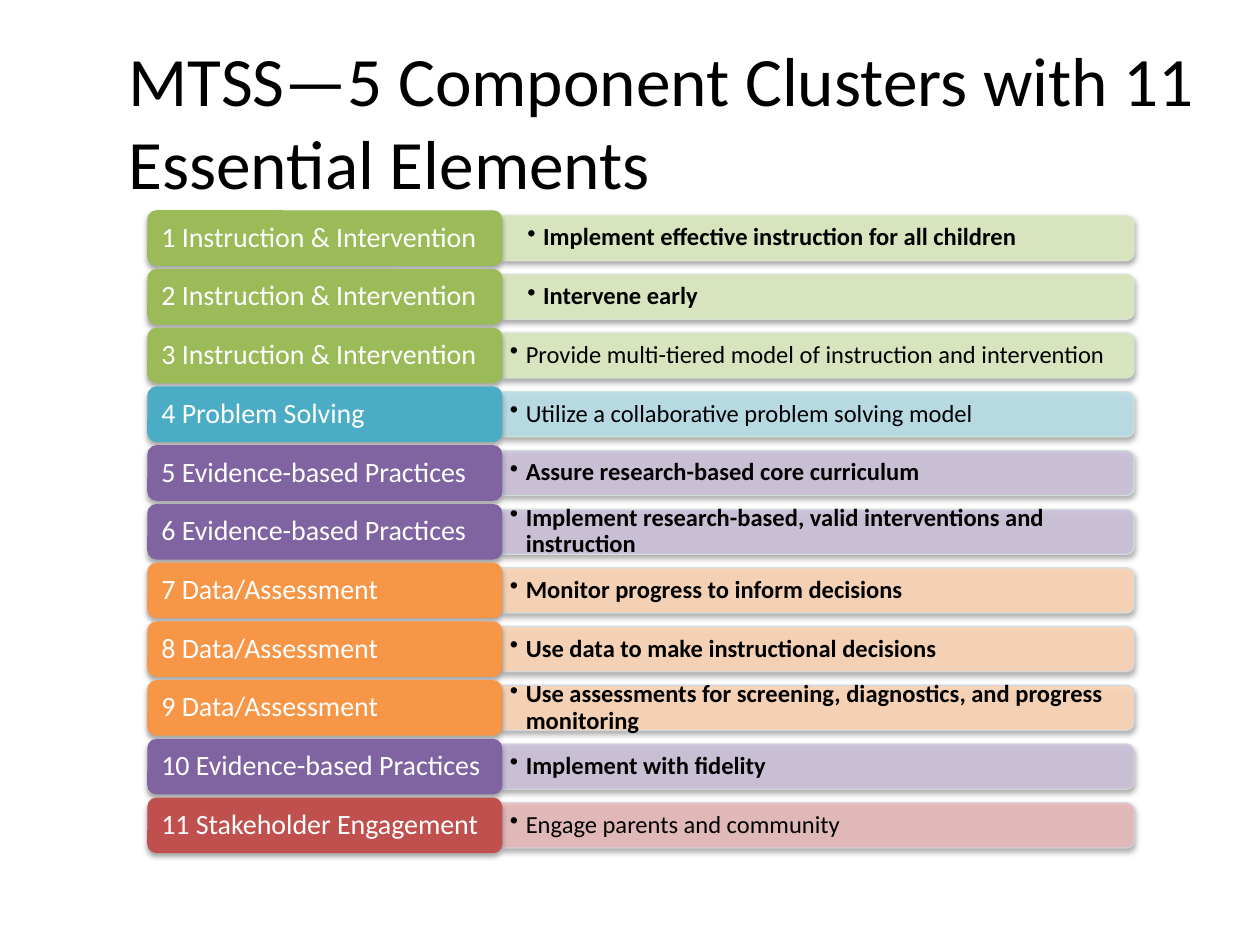
from pptx import Presentation, util as u
from pptx.dml.color import RGBColor
from pptx.enum import shapes, text
from pptx.oxml import parse_xml
from pptx.oxml.ns import nsdecls, qn
from lxml import etree

GREEN, TEAL = ("9BBB59", "D7E4BD", 100), ("4BACC6", "B7DEE8", 90)
PURPLE, ORANGE = ("8064A2", "CCC1DA", 90), ("F79646", "FCD5B5", 90)
RED = ("C0504D", "E6B9B8", 90)
TEACH, PROOF, DATA = ("Instruction & Intervention", "Evidence-based Practices",
                      "Data/Assessment")

# cluster, colours, bar edge, element, bold
ROWS = [
    (TEACH, GREEN, "DEE7D1", "Implement effective instruction for all children", True),
    (TEACH, GREEN, "D8E6D2", "Intervene early", True),
    (TEACH, GREEN, "D2E6D2", "Provide multi-tiered model of instruction and intervention", False),
    ("Problem Solving", TEAL, "D2E5D8", "Utilize a collaborative problem solving model", False),
    (PROOF, PURPLE, "D2E4DD", "Assure research-based core curriculum", True),
    (PROOF, PURPLE, "D2E3E2", "Implement research-based, valid interventions and instruction", True),
    (DATA, ORANGE, "D2DFE3", "Monitor progress to inform decisions", True),
    (DATA, ORANGE, "D2DAE2", "Use data to make instructional decisions", True),
    (DATA, ORANGE, "D3D6E1", "Use assessments for screening, diagnostics, and progress monitoring", True),
    (PROOF, PURPLE, "D4D3E1", "Implement with fidelity", True),
    ("Stakeholder Engagement", RED, "D8D3E0", "Engage parents and community", False),
]
SHADOW = (f'<a:outerShdw {nsdecls("a")} blurRad="40000" dist="23000" dir="5400000" '
          'rotWithShape="0"><a:srgbClr val="000000"><a:alpha val="35000"/>'
          '</a:srgbClr></a:outerShdw>')

# Centimetres
LEFT, TOP, SPAN = 2.97, 4.24, 11.84
TAB_W, TAB_H = 7.16, 1.12
BAR_W, BAR_H = 12.73, 0.91
BOX_W, BOX_H = 12.7, 0.82
EDGE = LEFT + TAB_W


def tint(color, code):
    color.rgb = RGBColor.from_string(code)


def write(shape, words, size, code, side, rise, bold=False):
    """Set middle-anchored text with side and rise as insets in cm."""
    frame = shape.text_frame
    frame.word_wrap = True
    frame.vertical_anchor = text.MSO_ANCHOR.MIDDLE
    frame.margin_left = frame.margin_right = u.Cm(side)
    frame.margin_top = frame.margin_bottom = u.Cm(rise)
    para = frame.paragraphs[0]
    para.alignment = text.PP_ALIGN.LEFT
    run = para.add_run()
    run.text = words
    run.font.name, run.font.size, run.font.bold = "Calibri", u.Pt(size), bold
    tint(run.font.color, code)
    return para


deck = Presentation()
deck.slide_width, deck.slide_height = u.Cm(25.4), u.Cm(19.05)
slide = deck.slides.add_slide(deck.slide_layouts[6])
items = slide.shapes

for i, (name, (dark, pale, solid), rim, words, bold) in enumerate(ROWS):
    top = TOP + SPAN * i / (len(ROWS) - 1)
    mid = top + TAB_H / 2

    # Turned a quarter so that the round corners face right
    bar = items.add_shape(
        shapes.MSO_SHAPE.ROUND_2_SAME_RECTANGLE,
        u.Cm(EDGE + (BAR_W - BAR_H) / 2), u.Cm(mid - BAR_W / 2),
        u.Cm(BAR_H), u.Cm(BAR_W))
    bar.rotation = 90
    bar.fill.solid()
    tint(bar.fill.fore_color, pale)
    tint(bar.line.color, rim)
    bar.line.width = u.Pt(0.75)
    for node, part in zip(bar.element.spPr.iter(qn("a:srgbClr")), (solid, 90)):
        etree.SubElement(node, qn("a:alpha")).set("val", str(part * 1000))

    box = items.add_textbox(u.Cm(EDGE), u.Cm(mid - BOX_H / 2), u.Cm(BOX_W), u.Cm(BOX_H))
    side, rise = (0.5, 0.25) if i < 2 else (0.15, 0.08)
    para = write(box, words, 14, "000000", side, rise, bold)
    para.line_spacing = 0.9
    props = para._p.get_or_add_pPr()
    props.set("marL", str(u.Cm(0.32)))
    props.set("indent", str(-u.Cm(0.32)))
    etree.SubElement(props, qn("a:buChar")).set("char", "•")

    tab = items.add_shape(shapes.MSO_SHAPE.ROUNDED_RECTANGLE,
                          u.Cm(LEFT), u.Cm(top), u.Cm(TAB_W), u.Cm(TAB_H))
    tab.fill.solid()
    tint(tab.fill.fore_color, dark)
    tab.line.fill.background()
    write(tab, f"{i + 1} {name}", 16, "FFFFFF", 0.23, 0.13).line_spacing = 0.9

    for shape in (bar, tab):
        shape.shadow.inherit = False
        shape.element.spPr.find(qn("a:effectLst")).append(parse_xml(SHADOW))

title = items.add_textbox(u.Cm(2.34), u.Cm(0.84), u.Cm(22.43), u.Cm(3.18))
write(title, "MTSS—5 Component Clusters with 11 Essential Elements",
      39.6, "000000", 0.25, 0.13)

deck.save("out.pptx")
